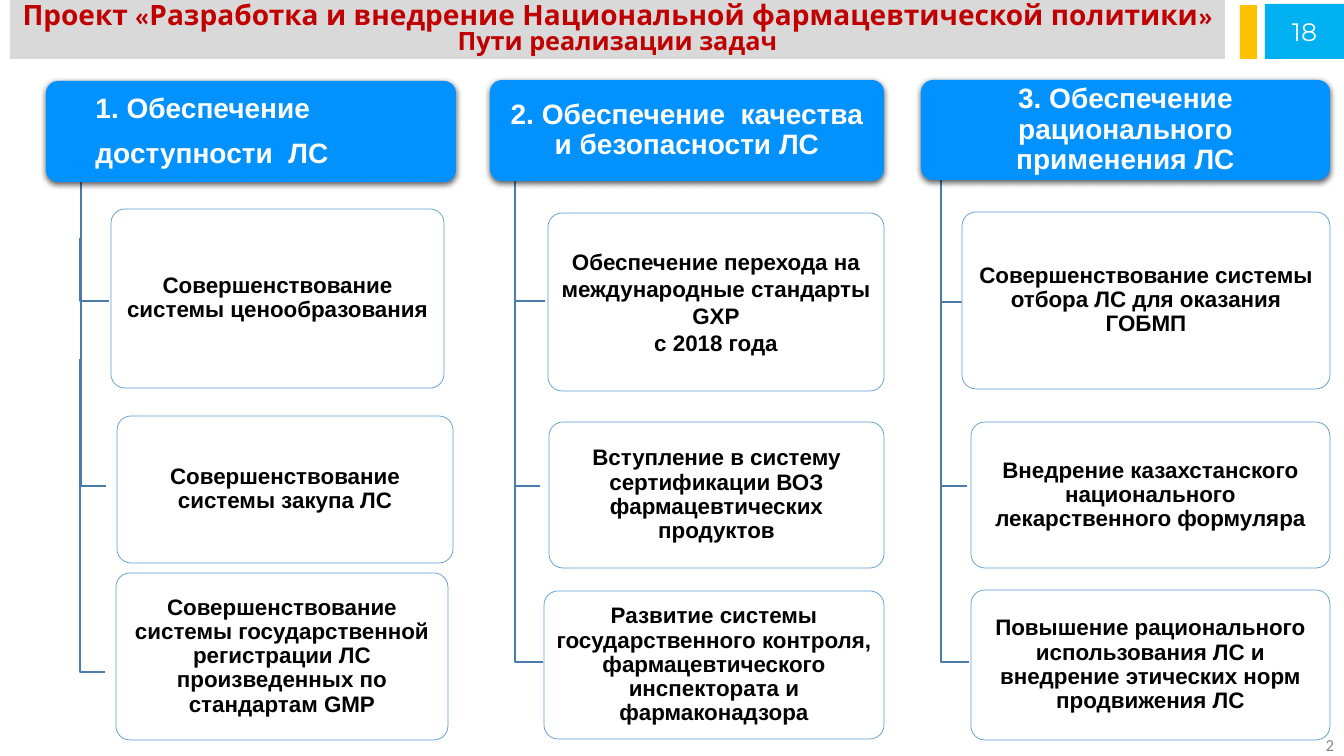
"""Build the slide on the tasks of the national pharmaceutical policy project."""
from lxml import etree
from pptx import Presentation
from pptx.dml.color import RGBColor
from pptx.enum.shapes import MSO_SHAPE as SHAPE
from pptx.enum.text import MSO_ANCHOR as ANCHOR, PP_ALIGN as ALIGN
from pptx.oxml.ns import qn
from pptx.util import Pt

PX = 914400 / 100.8
COLORS = {
    "band": "D9D9D9", "title": "C00000", "header": "0192FF", "card": "FFFFFF",
    "border": "5B9BD5", "branch": "497CAB", "marker": "FFC000",
    "number": "00B0F0", "light": "FFFFFF", "dark": "000000", "page": "898989",
}
FRAME = {"word_wrap": True, "vertical_anchor": ANCHOR.MIDDLE}
INSET = dict(FRAME, margin_left=7 * PX, margin_right=7 * PX,
             margin_top=6 * PX, margin_bottom=6 * PX)
LEFT_INSET = dict(INSET, margin_left=46 * PX, vertical_anchor=ANCHOR.TOP)
CENTERED = {"alignment": ALIGN.CENTER}
TIGHT = {"alignment": ALIGN.CENTER, "line_spacing": 0.9}
SPACED = {"alignment": ALIGN.LEFT, "space_after": Pt(8)}
HEADER_FONT = {"name": "Arial", "size": Pt(20), "bold": True}
CARD_FONT = {"name": "Arial", "size": Pt(16), "bold": True}

COLUMNS = [
    {
        "header": ((46, 81, 410, 101), ["1. Обеспечение", "доступности  ЛС"], LEFT_INSET, SPACED),
        "branches": [(81, 172, 486, 106), (80, 238, 301, 109), (80, 359, 672, 105)],
        "cards": [
            ((111, 209, 333, 179), ["Совершенствование системы ценообразования"], TIGHT),
            ((117, 416, 336, 147), ["Совершенствование системы закупа ЛС"], TIGHT),
            ((116, 573, 332, 167), ["Совершенствование системы государственной регистрации ЛС "
                                    "произведенных по стандартам GMP"], TIGHT),
        ],
    },
    {
        "header": ((490, 80, 394, 101), ["2. Обеспечение  качества и безопасности ЛС"], INSET, TIGHT),
        "branches": [(515, 172, 486, 540), (515, 239, 301, 545), (515, 383, 662, 543)],
        "cards": [
            ((548, 213, 336, 178), ["Обеспечение перехода на международные стандарты GXP",
                                    "c 2018 года"], CENTERED),
            ((549, 422, 335, 146), ["Вступление в систему сертификации ВОЗ "
                                    "фармацевтических продуктов"], TIGHT),
            ((544, 591, 340, 148), ["Развитие системы государственного контроля, "
                                    "фармацевтического инспектората и фармаконадзора"], TIGHT),
        ],
    },
    {
        "header": ((921, 80, 409, 100), ["3. Обеспечение рационального применения ЛС"], INSET, TIGHT),
        "branches": [(941, 172, 486, 967), (941, 233, 302, 962), (941, 383, 662, 969)],
        "cards": [
            ((962, 212, 368, 177), ["Совершенствование системы отбора ЛС для оказания ГОБМП"], TIGHT),
            ((971, 422, 359, 146), ["Внедрение казахстанского национального "
                                    "лекарственного формуляра"], TIGHT),
            ((971, 590, 359, 150), ["Повышение рационального использования ЛС и "
                                    "внедрение этических норм продвижения ЛС"], TIGHT),
        ],
    },
]

deck = Presentation()
deck.slide_width, deck.slide_height = round(1344 * PX), round(756 * PX)
slide = deck.slides.add_slide(deck.slide_layouts[6])


def add_block(kind, box, color, radius=0):
    block = slide.shapes.add_shape(kind, *[round(side * PX) for side in box])
    block.shadow.inherit = False
    block.fill.solid()
    block.fill.fore_color.rgb = RGBColor.from_string(COLORS[color])
    block.line.fill.background()
    if radius:
        block.adjustments[0] = radius / min(box[2:])
    return block


def write_text(shape, lines, frame_format, line_format, font_format, color):
    frame = shape.text_frame
    for key, value in frame_format.items():
        setattr(frame, key, round(value) if key.startswith("margin") else value)
    for index, line in enumerate(lines):
        paragraph = frame.add_paragraph() if index else frame.paragraphs[0]
        run = paragraph.add_run()
        run.text = line
        run.font.color.rgb = RGBColor.from_string(COLORS[color])
        for target, values in ((paragraph, line_format), (run.font, font_format)):
            for key, value in values.items():
                setattr(target, key, value)


page = slide.shapes.add_textbox(*[round(side * PX) for side in (1041, 725, 303, 40)])
write_text(page, ["2"], FRAME, {"alignment": ALIGN.RIGHT},
           {"name": "Calibri", "size": Pt(12)}, "page")

title = add_block(SHAPE.RECTANGLE, (10, 0, 1215, 59), "band")
write_text(title, ["Проект «Разработка и внедрение Национальной фармацевтической политики»",
                   "Пути реализации задач"], FRAME,
           {"alignment": ALIGN.CENTER, "line_spacing": 0.8},
           {"name": "League Spartan", "size": Pt(20), "bold": True}, "title")
title.text_frame.paragraphs[1].runs[0].font.size = Pt(18)

for column in COLUMNS:
    for x, top, bottom, right in column["branches"]:
        corners = [(round(a * PX), round(b * PX))
                   for a, b in ((x, top), (x, bottom), (right, bottom))]
        outline = slide.shapes.build_freeform(*corners[0])
        outline.add_line_segments(corners[1:], close=False)
        branch = outline.convert_to_shape()
        branch.shadow.inherit = False
        branch.fill.background()
        branch.line.color.rgb = RGBColor.from_string(COLORS["branch"])
        branch.line.width = Pt(1)

    for box, lines, line_format in column["cards"]:
        card = add_block(SHAPE.ROUNDED_RECTANGLE, box, "card", 14)
        card.line.color.rgb = RGBColor.from_string(COLORS["border"])
        card.line.width = Pt(0.5)
        tint = card.fill._xPr.find(qn("a:solidFill"))[0]
        etree.SubElement(tint, qn("a:alpha"), val="90000")
        write_text(card, lines, INSET, line_format, CARD_FONT, "dark")

    box, lines, frame_format, line_format = column["header"]
    header = add_block(SHAPE.ROUNDED_RECTANGLE, box, "header", 12)
    effects = header._element.spPr.find(qn("a:effectLst"))
    shadow = etree.SubElement(effects, qn("a:outerShdw"), blurRad=str(Pt(4.5)),
                              dist=str(Pt(1.5)), dir="5400000", rotWithShape="0")
    shade = etree.SubElement(shadow, qn("a:srgbClr"), val=COLORS["dark"])
    etree.SubElement(shade, qn("a:alpha"), val="63000")
    write_text(header, lines, frame_format, line_format, HEADER_FONT, "light")

add_block(SHAPE.RECTANGLE, (1240, 5, 17, 54), "marker")
number = add_block(SHAPE.RECTANGLE, (1265, 4, 79, 55), "number")
write_text(number, ["18"], FRAME, CENTERED, {"name": "Montserrat", "size": Pt(18)}, "light")

deck.save("out.pptx")
